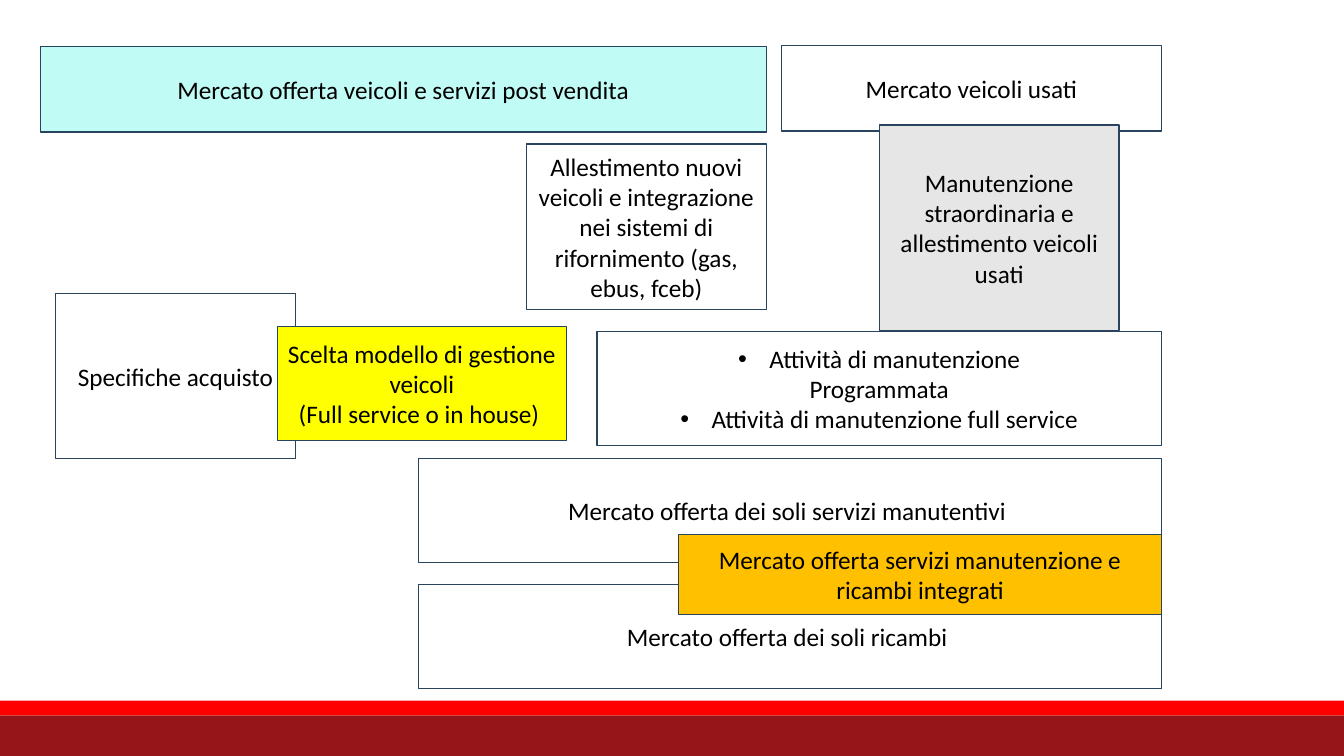
"""Build the slide that maps the vehicle supply and maintenance markets."""
import pptx
import pptx.dml.color
import pptx.enum.shapes
import pptx.enum.text
import pptx.util
from lxml import etree

Inches = pptx.util.Inches
RGBColor = pptx.dml.color.RGBColor

BLACK = RGBColor(0x00, 0x00, 0x00)
WHITE = RGBColor(0xFF, 0xFF, 0xFF)
NAVY = RGBColor(0x28, 0x44, 0x5D)
RED = RGBColor(0xFF, 0x00, 0x00)
DARK_RED = RGBColor(0x96, 0x15, 0x18)
AQUA = RGBColor(0xC1, 0xFB, 0xF5)
YELLOW = RGBColor(0xFF, 0xFF, 0x00)
GREY = RGBColor(0xE7, 0xE6, 0xE6)
AMBER = RGBColor(0xFF, 0xC0, 0x00)

SLIDE_WIDTH, SLIDE_HEIGHT = 13.33, 7.5
RIGHT_EDGE = 11.52
SUPPLY_RIGHT = 7.6
SERVICE_LEFT = 4.15
STEP_WIDTH, STEP_HEIGHT = 2.38, 1.64
BULLET = "• "
BULLET_INDENT = 0.31

FOOTER_BANDS = [(6.95, 7.1, RED), (7.1, SLIDE_HEIGHT, DARK_RED)]

BOXES = [
    (["Specifiche acquisto"], (0.55, 2.91, STEP_WIDTH, STEP_HEIGHT), None),
    (["Mercato offerta veicoli e servizi post vendita"],
     (0.4, 0.46, SUPPLY_RIGHT - 0.4, 0.85), AQUA),
    (["Scelta modello di gestione veicoli", "(Full service o in house) "],
     (2.75, 3.24, 2.87, 1.13), YELLOW),
    (["Mercato offerta dei soli servizi manutentivi "],
     (SERVICE_LEFT, 4.55, RIGHT_EDGE - SERVICE_LEFT, 1.03), None),
    ([BULLET + "Attività di manutenzione", "Programmata",
      BULLET + "Attività di manutenzione full service"],
     (5.92, 3.29, RIGHT_EDGE - 5.92, 1.13), None),
    (["Allestimento nuovi veicoli e integrazione nei sistemi di "
      "rifornimento (gas, ebus, fceb)"],
     (SUPPLY_RIGHT - STEP_WIDTH, 1.43, STEP_WIDTH, STEP_HEIGHT), None),
    (["Mercato veicoli usati"], (7.75, 0.45, RIGHT_EDGE - 7.75, 0.85), WHITE),
    (["Manutenzione straordinaria e allestimento veicoli usati"],
     (8.72, 1.24, STEP_WIDTH, 2.04), GREY),
    (["Mercato offerta dei soli ricambi "],
     (SERVICE_LEFT, 5.8, RIGHT_EDGE - SERVICE_LEFT, 1.03), WHITE),
    (["Mercato offerta servizi manutenzione e ricambi integrati"],
     (6.73, 5.3, RIGHT_EDGE - 6.73, 0.8), AMBER),
]


def add_rectangle(slide, bounds, fill=None, line=None):
    shape = slide.shapes.add_shape(
        pptx.enum.shapes.MSO_SHAPE.RECTANGLE, *map(Inches, bounds))
    shape.shadow.inherit = False
    if fill is None:
        shape.fill.background()
    else:
        shape.fill.solid()
        shape.fill.fore_color.rgb = fill
    if line is None:
        shape.line.fill.background()
    else:
        shape.line.color.rgb = line
        shape.line.width = pptx.util.Pt(1)
    return shape


def add_bullet(paragraph):
    properties = paragraph._p.get_or_add_pPr()
    properties.set("marL", str(Inches(BULLET_INDENT)))
    properties.set("indent", str(Inches(-BULLET_INDENT)))
    font = etree.SubElement(properties, pptx.oxml.ns.qn("a:buFont"))
    font.set("typeface", "Arial")
    character = etree.SubElement(properties, pptx.oxml.ns.qn("a:buChar"))
    character.set("char", BULLET.strip())


def write_paragraph(text, paragraph, size=18, color=BLACK, name="Calibri"):
    paragraph.alignment = pptx.enum.text.PP_ALIGN.CENTER
    if text.startswith(BULLET):
        add_bullet(paragraph)
    paragraph.text = text.removeprefix(BULLET)
    paragraph.font.size = pptx.util.Pt(size)
    paragraph.font.name = name
    paragraph.font.color.rgb = color


def add_box(slide, lines, bounds, fill):
    frame = add_rectangle(slide, bounds, fill, NAVY).text_frame
    frame.word_wrap = True
    frame.vertical_anchor = pptx.enum.text.MSO_ANCHOR.MIDDLE
    for index, text in enumerate(lines):
        paragraph = frame.add_paragraph() if index else frame.paragraphs[0]
        write_paragraph(text, paragraph)


def main():
    presentation = pptx.Presentation()
    presentation.slide_width = Inches(SLIDE_WIDTH)
    presentation.slide_height = Inches(SLIDE_HEIGHT)
    slide = presentation.slides.add_slide(presentation.slide_layouts[6])
    for top, bottom, color in FOOTER_BANDS:
        add_rectangle(slide, (0, top, SLIDE_WIDTH, bottom - top), color)
    for lines, bounds, fill in BOXES:
        add_box(slide, lines, bounds, fill)
    presentation.save("out.pptx")


if __name__ == "__main__":
    main()
